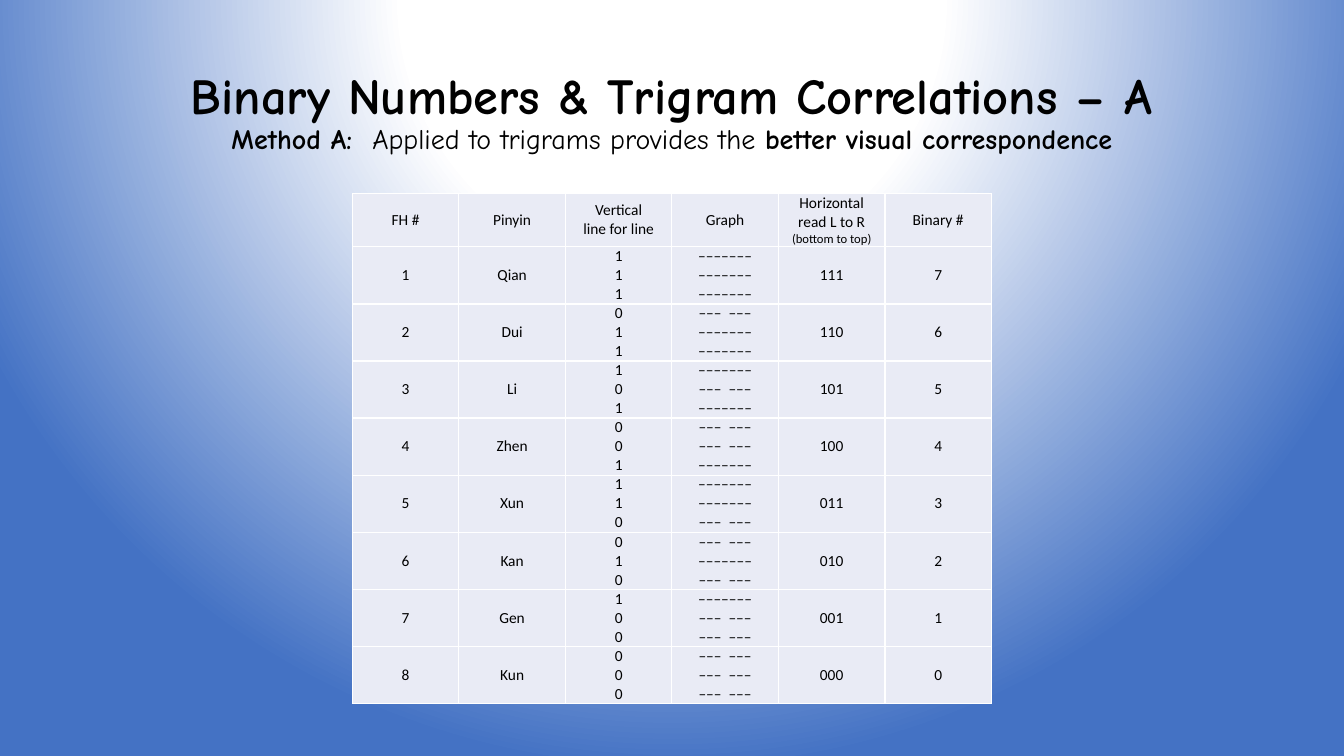
from copy import deepcopy

from pptx import Presentation
from pptx.dml.color import RGBColor
from pptx.enum.text import MSO_ANCHOR as Anchor, MSO_AUTO_SIZE as AutoSize, PP_ALIGN as Align
from pptx.oxml import parse_xml
from pptx.oxml.ns import nsdecls, qn
from pptx.util import Pt

BLACK, WHITE, BLUE, CELL_FILL = "000000", "FFFFFF", "4472C4", "E9EBF5"
HEADERS = [
    ["FH #"],
    ["Pinyin"],
    ["Vertical", "line for line"],
    ["Graph"],
    ["Horizontal", "read L to R", "(bottom to top)"],
    ["Binary #"],
]
TRIGRAMS = ["Qian", "Dui", "Li", "Zhen", "Xun", "Kan", "Gen", "Kun"]
GRAPH_LINES = {"1": "–––––––", "0": "–––  –––"}


def color(value):
    return RGBColor.from_string(value)


def set_values(target, values):
    for name, value in values.items():
        setattr(target, name, value)


def add_run(paragraph, text, font_name, size, bold=False):
    run = paragraph.add_run()
    run.text = text
    set_values(run.font, {"name": font_name, "size": Pt(size), "bold": bold})
    run.font.color.rgb = color(BLACK)
    return run


def fill_background(slide):
    # Radial glow centred above the top edge
    slide.background.fill.solid()
    properties = slide.element.find(".//" + qn("p:bgPr"))
    stops = "".join(
        f'<a:gs pos="{position * 1000}"><a:srgbClr val="{value}"/></a:gs>'
        for position, value in [(0, WHITE), (35, WHITE), (100, BLUE)]
    )
    gradient = parse_xml(
        f'<a:gradFill {nsdecls("a")} rotWithShape="1"><a:gsLst>{stops}</a:gsLst>'
        '<a:path path="circle"><a:fillToRect l="50000" t="-80000" r="50000" b="180000"/>'
        "</a:path></a:gradFill>"
    )
    properties.replace(properties[0], gradient)


def add_title(slide, left, top, width, height):
    title = slide.shapes.title
    set_values(title, {"left": Pt(left), "top": Pt(top), "width": Pt(width), "height": Pt(height)})
    frame = title.text_frame
    set_values(frame, {"word_wrap": True, "auto_size": AutoSize.NONE,
                       "vertical_anchor": Anchor.MIDDLE})
    paragraph = frame.paragraphs[0]
    set_values(paragraph, {"alignment": Align.CENTER, "line_spacing": 0.9})

    # Heading, with a line break of the same size
    heading = add_run(paragraph, "Binary Numbers & Trigram Correlations – A", "Comic Neue", 36, True)
    paragraph.add_line_break()
    line_break = paragraph.runs[0].font and frame._txBody.find(".//" + qn("a:br"))
    line_break.append(deepcopy(heading.font._rPr))

    # Subtitle
    for text, bold in [("Method A:  ", True), ("Applied to trigrams provides the ", False),
                       ("better visual correspondence", True)]:
        add_run(paragraph, text, "Comic Neue", 20, bold)


def add_borders(cell):
    properties = cell._tc.get_or_add_tcPr()
    for side in ("lnL", "lnR", "lnT", "lnB"):
        properties.append(parse_xml(
            f'<a:{side} {nsdecls("a")} w="12700"><a:solidFill><a:srgbClr val="{WHITE}"/>'
            f"</a:solidFill></a:{side}>"
        ))


def fill_cell(cell, lines):
    add_borders(cell)
    cell.fill.solid()
    cell.fill.fore_color.rgb = color(CELL_FILL)
    set_values(cell, {"vertical_anchor": Anchor.MIDDLE, "margin_left": Pt(5),
                      "margin_right": Pt(5), "margin_top": 0, "margin_bottom": 0})
    frame = cell.text_frame
    for index, line in enumerate(lines):
        paragraph = frame.add_paragraph() if index else frame.paragraphs[0]
        paragraph.alignment = Align.CENTER
        add_run(paragraph, line, "Calibri", 9 if line.startswith("(") else 11)


def trigram_row(number, name):
    value = len(TRIGRAMS) - number
    digits = f"{value:03b}"
    top_down = digits[::-1]
    return [[str(number)], [name], list(top_down),
            [GRAPH_LINES[digit] for digit in top_down], [digits], [str(value)]]


def add_trigram_table(slide, left, top, width, height):
    rows = [HEADERS] + [trigram_row(number, name) for number, name in enumerate(TRIGRAMS, 1)]
    header_height = 36
    table = slide.shapes.add_table(
        len(rows), len(HEADERS), Pt(left), Pt(top), Pt(width), Pt(height)).table
    set_values(table, {"first_row": False, "horz_banding": False})
    for column in table.columns:
        column.width = Pt(width / len(HEADERS))
    for index, (row, contents) in enumerate(zip(table.rows, rows)):
        row.height = Pt((height - header_height) / len(TRIGRAMS) if index else header_height)
        for cell, lines in zip(row.cells, contents):
            fill_cell(cell, lines)


def main():
    presentation = Presentation()
    set_values(presentation, {"slide_width": Pt(960), "slide_height": Pt(540)})
    slide = presentation.slides.add_slide(presentation.slide_layouts[5])
    fill_background(slide)
    add_title(slide, 66, 28.75, 828, 104.4)
    add_trigram_table(slide, 251.7, 138.2, 456.6, 341.3)
    presentation.save("out.pptx")


if __name__ == "__main__":
    main()
